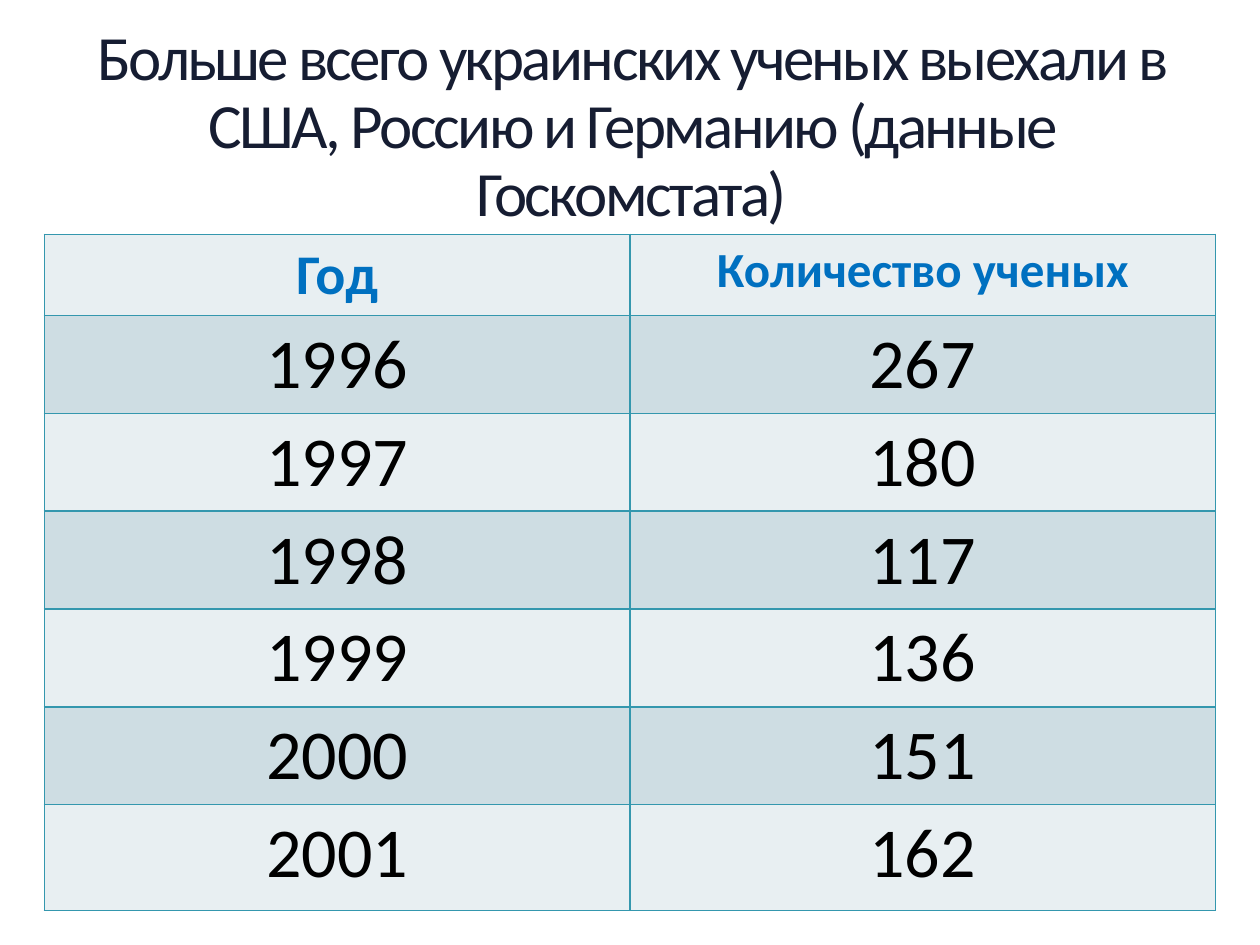
from lxml.etree import SubElement
from pptx import Presentation
from pptx.dml.color import RGBColor
from pptx.enum.text import MSO_ANCHOR as Anchor, PP_ALIGN as Align
from pptx.oxml.ns import qn
from pptx.util import Pt

COLORS = {"title": "161D32", "header": "0070C0", "body": "000000",
          "light": "E8EFF2", "dark": "CEDDE3", "border": "3497AE"}
TITLE = "Больше всего украинских ученых выехали в США, Россию и Германию (данные Госкомстата)"
ROWS = [("Год", "Количество ученых"), ("1996", "267"), ("1997", "180"),
        ("1998", "117"), ("1999", "136"), ("2000", "151"), ("2001", "162")]
HEADER_SIZES = (32, 28)
ROW_HEIGHTS = [46.3] + [55.9] * 5 + [60.5]


def color(key):
    return RGBColor.from_string(COLORS[key])


def write(p, text, key, **font):
    p.alignment = Align.CENTER
    r = p.add_run()
    r.text = text
    for name, value in {"name": "Calibri", **font}.items():
        setattr(r.font, name, value)
    r.font.color.rgb = color(key)
    return r


def add_borders(cell):
    tc_pr = cell._tc.get_or_add_tcPr()
    for side in ("lnL", "lnR", "lnT", "lnB"):
        ln = SubElement(tc_pr, qn(f"a:{side}"), w=str(Pt(1)))
        fill = SubElement(ln, qn("a:solidFill"))
        SubElement(fill, qn("a:srgbClr"), val=COLORS["border"])


def add_title(s, x, y, w, h):
    tf = s.shapes.add_textbox(Pt(x), Pt(y), Pt(w), Pt(h)).text_frame
    layout = {"word_wrap": True, "vertical_anchor": Anchor.TOP, "margin_left": 0,
              "margin_right": 0, "margin_top": 0, "margin_bottom": 0}
    for name, value in layout.items():
        setattr(tf, name, value)
    p = tf.paragraphs[0]
    p.line_spacing = 0.9
    r = write(p, TITLE, "title", size=Pt(36))
    r._r.get_or_add_rPr().set("spc", "-150")


def add_scientists_table(s, x, y, w, h):
    table = s.shapes.add_table(len(ROWS), 2, Pt(x), Pt(y), Pt(w), Pt(h)).table
    for col in table.columns:
        col.width = Pt(w / 2)
    for i, (values, height) in enumerate(zip(ROWS, ROW_HEIGHTS)):
        table.rows[i].height = Pt(height)
        for j, value in enumerate(values):
            cell = table.cell(i, j)
            add_borders(cell)
            cell.fill.solid()
            cell.fill.fore_color.rgb = color("dark" if i % 2 else "light")
            size = 40 if i else HEADER_SIZES[j]
            write(cell.text_frame.paragraphs[0], value, "body" if i else "header",
                  size=Pt(size), bold=i == 0)


def main():
    prs = Presentation()
    prs.slide_width, prs.slide_height = Pt(720), Pt(540)
    s = prs.slides.add_slide(prs.slide_layouts[6])
    add_title(s, 31, 15, 660, 157)
    add_scientists_table(s, 25.4, 134, 669.2, sum(ROW_HEIGHTS))
    prs.save("out.pptx")


if __name__ == "__main__":
    main()
